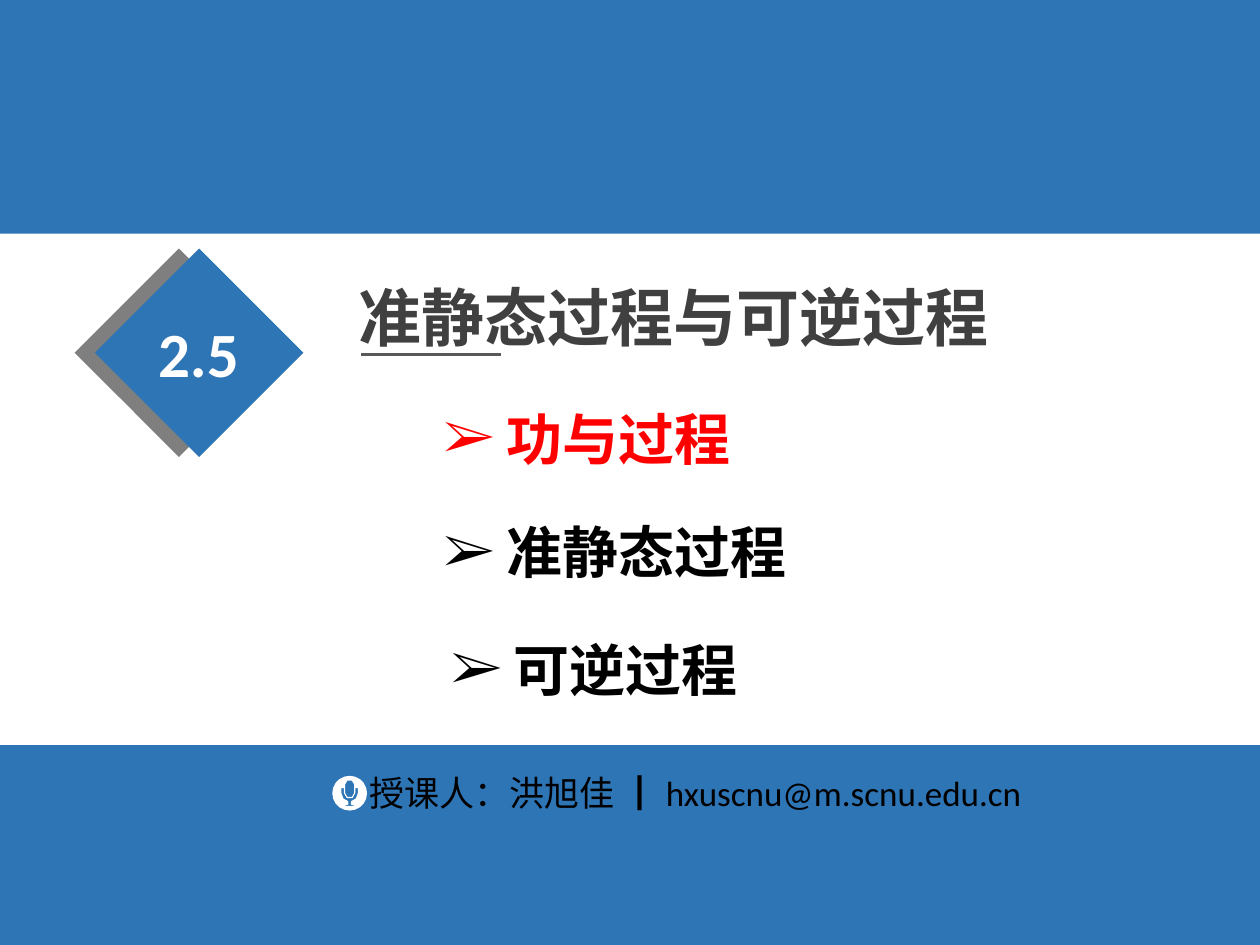
from math import cos, radians, sin

from lxml.etree import SubElement
from pptx import Presentation
from pptx.dml.color import RGBColor as RGB
from pptx.enum.shapes import MSO_CONNECTOR as LINE, MSO_SHAPE as SHAPE
from pptx.enum.text import MSO_AUTO_SIZE as AUTO, PP_ALIGN as ALIGN
from pptx.oxml.ns import qn
from pptx.util import Inches, Pt

TITLE = "准静态过程与可逆过程"
NUMBER = "2.5"
TOPICS = [  # text, colour, column, row, width
    ("功与过程", "red", 34.2, 32.1, 25.1),
    ("准静态过程", "black", 34.2, 41.1, 29.6),
    ("可逆过程", "black", 34.8, 50.4, 25.1),
]
TEACHER = "授课人：洪旭佳 ┃ "
EMAIL = "hxuscnu@m.scnu.edu.cn"

COLS, ROWS = 100, 75
BANDS = [(0, 18.55), (59.15, 15.85)]  # row, height
TILES = [("gray", 8.35), ("blue", 9.95)]  # colour, column
MIC = (27.75, 62.95)  # centre column, row

THEME = {
    "color": {"blue": "2E75B6", "gray": "7F7F7F", "dark": "404040", "rule": "595959",
              "red": "FF0000", "black": "000000", "white": "FFFFFF"},
    "size": {"title": 36, "topic": 32, "foot": 20},
    "font": {"cjk": "Noto Sans CJK SC", "latin": "Calibri", "serif": "Times New Roman"},
}

deck = Presentation()
deck.slide_width, deck.slide_height = Inches(10), Inches(7.5)
slide = deck.slides.add_slide(deck.slide_layouts[6])
shapes = slide.shapes


def grid(*cells):
    """Turn column, row pairs into slide lengths."""
    units = deck.slide_width / COLS, deck.slide_height / ROWS
    return [round(cell * units[i % 2]) for i, cell in enumerate(cells)]


def color(name):
    return RGB.from_string(THEME["color"][name])


def paint(shape, name):
    shape.shadow.inherit = False
    shape.fill.solid()
    shape.fill.fore_color.rgb = color(name)
    shape.line.fill.background()


def rect(home, cells, name, turn=0):
    shape = home.add_shape(SHAPE.RECTANGLE, *grid(*cells))
    shape.rotation = turn
    paint(shape, name)


def label(home, cells, runs, size, tint, bold=True, **style):
    """Add a one-line text box; runs are (text, font) pairs."""
    frame = home.add_textbox(*grid(*cells)).text_frame
    frame.word_wrap, frame.auto_size = False, AUTO.SHAPE_TO_FIT_TEXT
    para = frame.paragraphs[0]
    for key, value in style.items():
        setattr(para, key, value)
    look = {"size": Pt(THEME["size"][size]), "bold": bold}
    for text, face in runs:
        run = para.add_run()
        run.text = text
        for key, value in {**look, "name": THEME["font"][face]}.items():
            setattr(run.font, key, value)
        run.font.color.rgb = color(tint)
        SubElement(run.font._element, qn("a:ea")).set("typeface", THEME["font"]["cjk"])
    return frame


def bullet(frame):
    frame.margin_top = frame.margin_bottom = 0
    props = frame.paragraphs[0]._p.get_or_add_pPr()
    props.set("marL", str(Inches(0.5)))
    props.set("indent", str(-Inches(0.5)))
    SubElement(props, qn("a:buFont")).set("typeface", THEME["font"]["serif"])
    SubElement(props, qn("a:buChar")).set("char", "➢")


def arc(size, start, end, drop=0, steps=3):
    """Points along an arc, clockwise from the right, in degrees."""
    turns = [radians(start + (end - start) * i / steps) for i in range(steps + 1)]
    return [(size * cos(t), size * sin(t) + drop) for t in turns]


def icon(center):
    disc = arc(1.38, 0, 342, steps=19)
    head = arc(0.35, 0, 180) + arc(0.35, 180, 360, -0.7)
    stand = (arc(0.65, 0, 80, steps=2) + [(0.1, 0.9), (0.45, 1), (-0.45, 1), (-0.1, 0.9)]
             + arc(0.65, 100, 180, steps=2) + [(-0.65, -0.4), (-0.45, -0.4)]
             + arc(0.45, 180, 0) + [(0.45, -0.4), (0.65, -0.4)])
    pen = None
    for ring in (disc, head, stand):
        first, *rest = [grid(center[0] + x, center[1] + y) for x, y in ring]
        if pen is None:
            pen = shapes.build_freeform(*first)
        else:
            pen.move_to(*first)
        pen.add_line_segments(rest, close=True)
    paint(pen.convert_to_shape(), "white")


label(shapes, (27.45, 19.8, 52.7, 7.8), [(TITLE, "cjk")], "title", "dark", line_spacing=1.3)

badge = shapes.add_group_shape().shapes
for name, col in TILES:
    rect(badge, (col, 22.15, 11.7, 11.7), name, 45)
label(badge, (11.5, 22.7, 8.5, 8.2), [(NUMBER, "latin")], "title", "white",
      line_spacing=1.3, alignment=ALIGN.CENTER)

rule = shapes.add_connector(LINE.STRAIGHT, *grid(28.65, 28.15, 39.75, 28.15))
rule.line.width, rule.line.color.rgb = Pt(1.5), color("rule")
SubElement(rule._element.spPr, qn("a:effectLst"))

for row, tall in BANDS:
    rect(shapes, (0, row, COLS, tall), "blue")

for text, tint, col, row, wide in TOPICS:
    bullet(label(shapes, (col, row, wide, 5.4), [(text, "serif")], "topic", tint))

label(shapes, (28, 60.7, 54.4, 4.4), [(TEACHER, "cjk"), (EMAIL, "latin")],
      "foot", "black", bold=False, alignment=ALIGN.CENTER)
icon(MIC)

deck.save("out.pptx")
